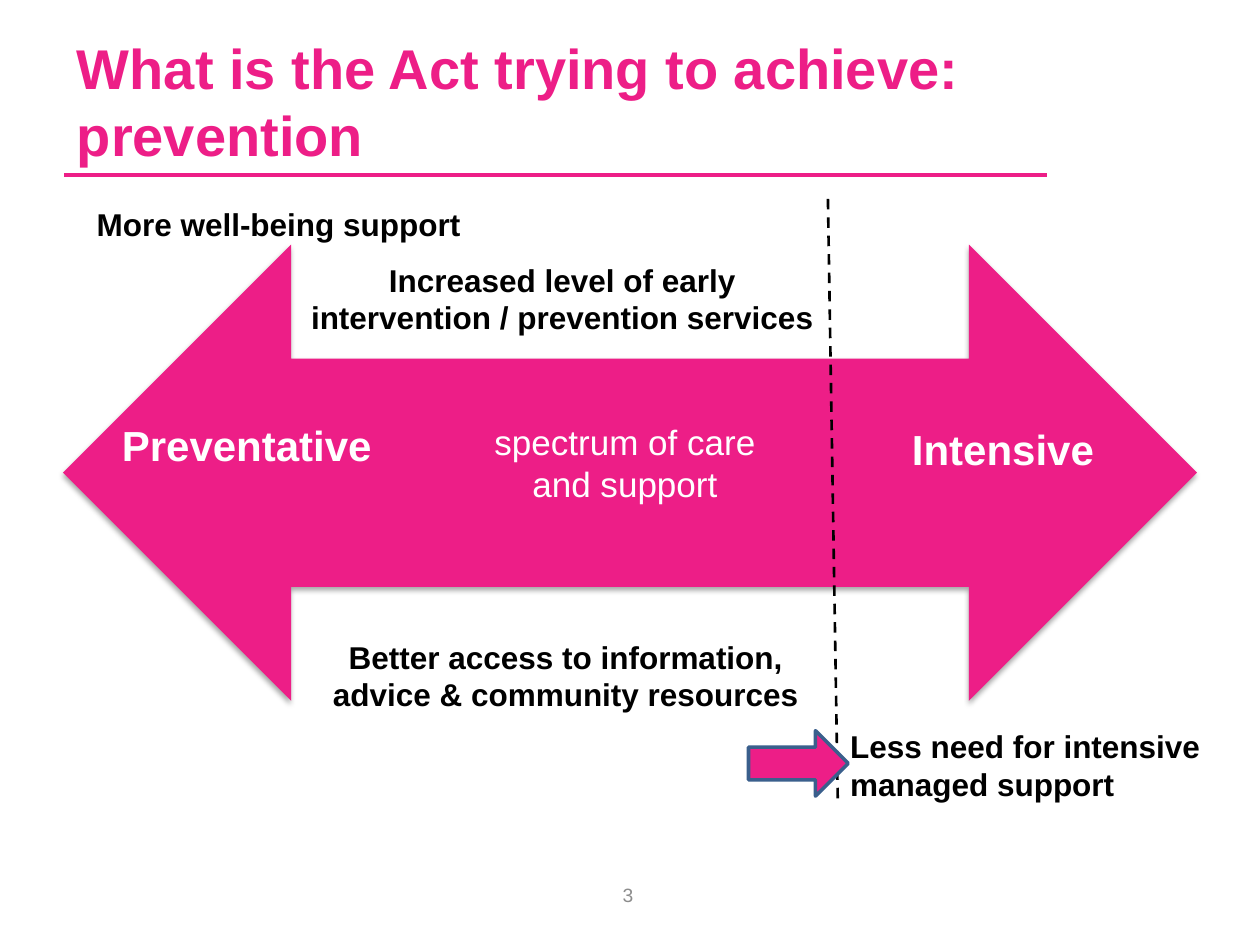
from lxml import etree
from pptx import Presentation
from pptx.dml.color import RGBColor
from pptx.enum.dml import MSO_LINE
from pptx.enum.shapes import MSO_CONNECTOR, MSO_SHAPE
from pptx.enum.text import MSO_ANCHOR, PP_ALIGN
from pptx.oxml.ns import qn
from pptx.util import Cm, Pt

LEFT, CENTER = PP_ALIGN.LEFT, PP_ALIGN.CENTER
TOP, MIDDLE, BOTTOM = MSO_ANCHOR.TOP, MSO_ANCHOR.MIDDLE, MSO_ANCHOR.BOTTOM
DASH = MSO_LINE.DASH
STRAIGHT = MSO_CONNECTOR.STRAIGHT
SPECTRUM_ARROW, SMALL_ARROW = MSO_SHAPE.LEFT_RIGHT_ARROW, MSO_SHAPE.RIGHT_ARROW

FONT = "Arial"
COLORS = {
    "pink": "ED1E87",
    "blue": "3A5F8C",
    "black": "000000",
    "white": "FFFFFF",
    "gray": "8C8C8C",
}


def rgb(name):
    return RGBColor.from_string(COLORS[name])


def add_text(s, box, text, size, color="black", bold=True, align=CENTER,
             anchor=TOP, side_inset=0.25):
    tf = s.shapes.add_textbox(*map(Cm, box)).text_frame
    tf.word_wrap = True
    tf.vertical_anchor = anchor
    tf.margin_left = tf.margin_right = Cm(side_inset)
    p = tf.paragraphs[0]
    p.text = text
    p.alignment = align
    p.font.name = FONT
    p.font.size = Pt(size)
    p.font.bold = bold
    p.font.color.rgb = rgb(color)


def add_line(s, ends, color, width, dash=None):
    line = s.shapes.add_connector(STRAIGHT, *map(Cm, ends))
    line.line.color.rgb = rgb(color)
    line.line.width = Pt(width)
    if dash:
        line.line.dash_style = dash
    etree.SubElement(line._element.spPr, qn("a:effectLst"))


def add_arrow(s, kind, box, outline=None):
    sp = s.shapes.add_shape(kind, *map(Cm, box))
    sp.shadow.inherit = False
    sp.fill.solid()
    sp.fill.fore_color.rgb = rgb("pink")
    if outline:
        sp.line.color.rgb = rgb(outline)
        sp.line.width = Pt(2)
    else:
        sp.line.fill.background()
    return sp


def add_soft_shadow(sp):
    effects = sp._element.spPr.find(qn("a:effectLst"))
    shadow = etree.SubElement(effects, qn("a:outerShdw"), blurRad=str(Pt(3.1)),
                              dist=str(Pt(1.8)), dir="5400000", rotWithShape="0")
    color = etree.SubElement(shadow, qn("a:srgbClr"), val=COLORS["black"])
    etree.SubElement(color, qn("a:alpha"), val="35000")


def main():
    prs = Presentation()
    prs.slide_width, prs.slide_height = Cm(25.4), Cm(19.05)
    s = prs.slides.add_slide(prs.slide_layouts[6])

    add_line(s, (1.3, 3.53, 21.1, 3.53), "pink", 2)
    add_text(s, (9.7, 17.53, 5.92, 1.02), "3", 11, "gray", False, anchor=MIDDLE)
    add_text(s, (1.3, 0.74, 19.8, 2.77), "What is the Act trying to achieve: prevention",
             32, "pink", align=LEFT, anchor=BOTTOM)

    add_soft_shadow(add_arrow(s, SPECTRUM_ARROW, (1.27, 4.93, 22.86, 9.2)))
    add_text(s, (18.34, 5.94, 3.76, 6.22), "Intensive", 24, "white",
             anchor=MIDDLE, side_inset=0)
    add_text(s, (2.31, 6.15, 5.33, 5.64), "Preventative", 24, "white",
             anchor=MIDDLE, side_inset=0)
    add_text(s, (9.5, 8.36, 6.2, 1.96), "spectrum of care and support", 20, "white", False)

    add_text(s, (1.7, 4.01, 8.2, 1.8), "More well-being support", 18, align=LEFT)
    add_text(s, (6.3, 12.73, 10.21, 1.8),
             "Better access to information, advice & community resources", 18)
    add_line(s, (16.69, 4.01, 16.89, 16.23), "black", 1.5, DASH)
    add_text(s, (5.99, 5.13, 10.69, 1.8),
             "Increased level of early intervention / prevention services", 18)
    add_text(s, (16.89, 14.53, 7.59, 2.57), "Less need for intensive managed support",
             18, align=LEFT)
    add_arrow(s, SMALL_ARROW, (15.09, 14.73, 2.01, 1.32), "blue")

    prs.save("out.pptx")


if __name__ == "__main__":
    main()
